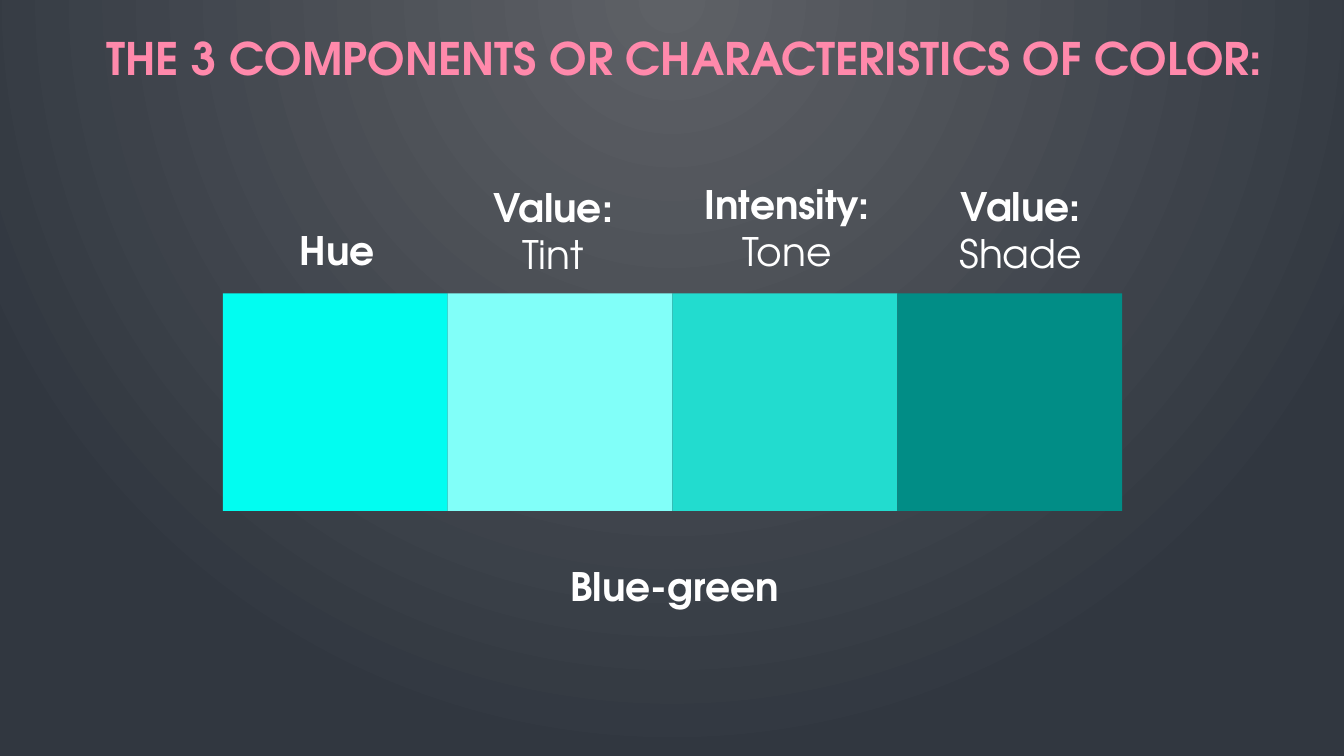
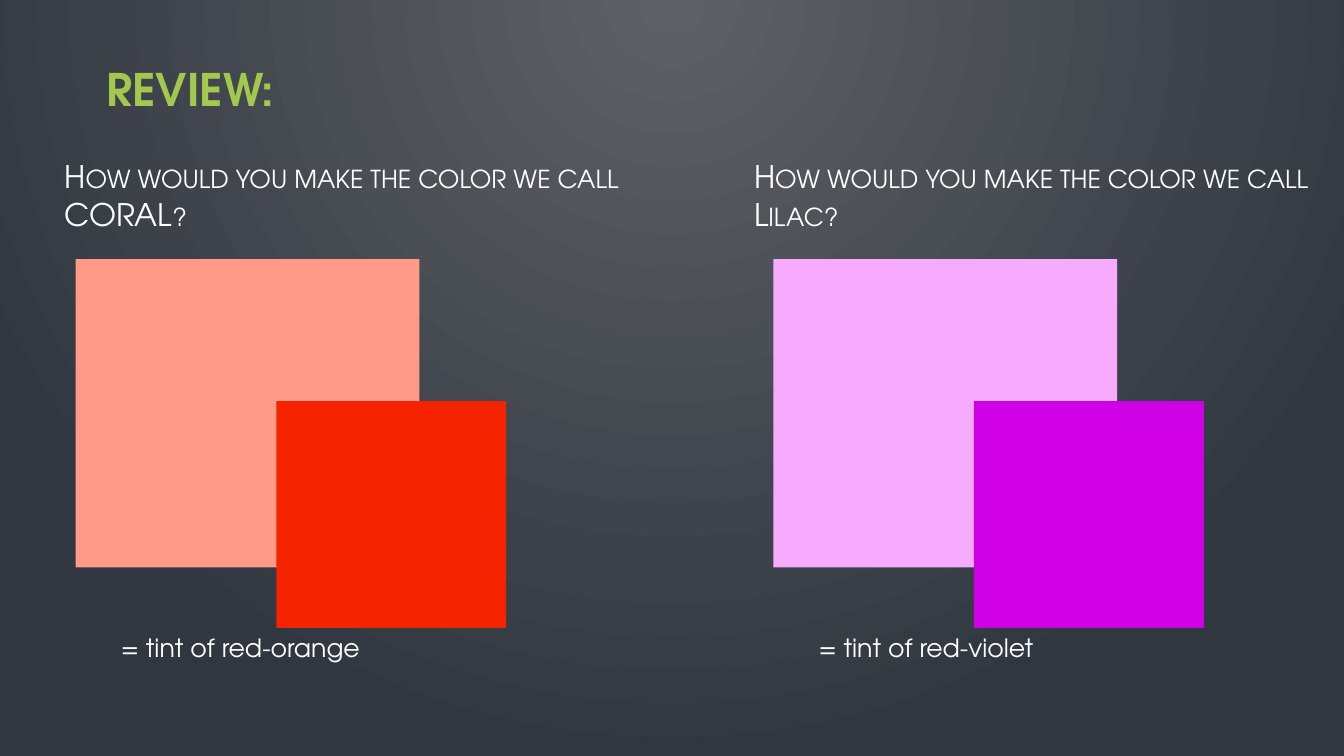
from dataclasses import dataclass

from lxml import etree
from pptx import Presentation
from pptx.dml.color import RGBColor
from pptx.enum.shapes import MSO_SHAPE
from pptx.enum.text import MSO_ANCHOR, PP_ALIGN
from pptx.oxml.ns import qn
from pptx.util import Inches, Pt

RECTANGLE = MSO_SHAPE.RECTANGLE
TOP, MIDDLE = MSO_ANCHOR.TOP, MSO_ANCHOR.MIDDLE
LEFT, CENTER = PP_ALIGN.LEFT, PP_ALIGN.CENTER


@dataclass(frozen=True)
class Theme:
    font: str = "TeX Gyre Adventor"
    text: str = "FFFFFF"
    glow: str = "5E6166"
    edge: str = "313740"
    pink: str = "FF89AB"
    green: str = "A2C84E"
    title_size: float = 32
    label_size: float = 28
    question_size: float = 22.2
    answer_size: float = 18


THEME = Theme()

SWATCH_WIDTH, SWATCH_HEIGHT = 2.23, 2.16
SWATCH_LEFT, SWATCH_TOP = 2.21, 2.91

# Fill, label lines, label box (left, top, width, height)
SWATCHES = [
    ("01FDF1", ["Hue"], (2.87, 2.2, 0.95, 0.57)),
    ("81FFF9", ["Value:", "Tint"], (4.77, 1.77, 1.43, 1.04)),
    ("22DCCF", ["Intensity:", "Tone"], (6.87, 1.74, 1.87, 1.04)),
    ("018D86", ["Value:", "Shade"], (9.41, 1.76, 1.43, 1.04)),
]

# Question, question left, panel left, tint fill, hue fill, answer
REVIEWS = [
    ("How would you make the color we call CORAL?", 0.54, 0.75,
     "FF9A89", "F62300", "= tint of red-orange"),
    ("How would you make the color we call Lilac?", 7.38, 7.67,
     "F7ABFF", "D000E6", "= tint of red-violet"),
]


def set_background(master):
    """Give every slide a circular glow that spreads from the top centre."""
    fill = master.background.fill
    fill.gradient()
    for stop, color, position in zip(
            fill.gradient_stops, (THEME.glow, THEME.edge), (0, 1)):
        stop.color.rgb = RGBColor.from_string(color)
        stop.position = position
    gradient = next(master.element.iter(qn("a:gradFill")))
    linear = gradient.find(qn("a:lin"))
    circle = etree.Element(qn("a:path"), {"path": "circle"})
    etree.SubElement(circle, qn("a:fillToRect"),
                     {"l": "43000", "t": "0", "r": "43000", "b": "100000"})
    gradient.replace(linear, circle)


def add_text(slide, box, lines, size, color=THEME.text, bold_first=False,
             align=LEFT, anchor=TOP, wrap=True, small_caps=False):
    """Write one paragraph per line; bold_first makes only the first one bold."""
    shape = slide.shapes.add_textbox(*map(Inches, box))
    frame = shape.text_frame
    frame.word_wrap = wrap
    frame.vertical_anchor = anchor
    frame.text = "\n".join(lines)
    for index, paragraph in enumerate(frame.paragraphs):
        paragraph.alignment = align
        font = paragraph.font
        font.name = THEME.font
        font.size = Pt(size)
        font.bold = bold_first and index == 0
        font.color.rgb = RGBColor.from_string(color)
        if small_caps:
            properties = paragraph._p.get_or_add_pPr()
            properties.find(qn("a:defRPr")).set("cap", "small")


def add_title(slide, text, box, color):
    add_text(slide, box, [text], THEME.title_size, color,
             bold_first=True, anchor=MIDDLE)


def add_label(slide, lines, box):
    add_text(slide, box, lines, THEME.label_size,
             bold_first=True, align=CENTER, wrap=False)


def add_swatch(slide, box, color):
    shape = slide.shapes.add_shape(RECTANGLE, *map(Inches, box))
    shape.shadow.inherit = False
    shape.fill.solid()
    shape.fill.fore_color.rgb = RGBColor.from_string(color)
    shape.line.fill.background()


def add_review(slide, question, question_left, left, tint, hue, answer):
    """Add a question, its tint with the hue overlapping it, and the answer."""
    add_text(slide, (question_left, 1.57, 5.75, 0.73), [question],
             THEME.question_size, anchor=MIDDLE, small_caps=True)
    add_swatch(slide, (left, 2.57, 3.41, 3.06), tint)
    add_text(slide, (left + 0.35, 6.22, 3.06, 0.4), [answer], THEME.answer_size)
    add_swatch(slide, (left + 1.99, 3.98, 2.28, 2.25), hue)


def build_components(slide):
    add_title(slide, "THE 3 COMPONENTS OR CHARACTERISTICS OF COLOR:",
              (0.96, 0.06, 12.1, 1.02), THEME.pink)
    for index, (color, lines, label_box) in enumerate(SWATCHES):
        left = SWATCH_LEFT + index * SWATCH_WIDTH
        add_swatch(slide, (left, SWATCH_TOP, SWATCH_WIDTH, SWATCH_HEIGHT), color)
        add_label(slide, lines, label_box)
    add_label(slide, ["Blue-green"], (5.54, 5.53, 2.3, 0.57))


def build_review(slide):
    add_title(slide, "REVIEW:", (0.96, 0.45, 11.26, 0.86), THEME.green)
    for review in REVIEWS:
        add_review(slide, *review)


def main():
    presentation = Presentation()
    presentation.slide_width = Inches(13.33)
    presentation.slide_height = Inches(7.5)
    set_background(presentation.slide_master)
    blank = presentation.slide_layouts[6]
    for build in (build_components, build_review):
        build(presentation.slides.add_slide(blank))
    presentation.save("out.pptx")


if __name__ == "__main__":
    main()
